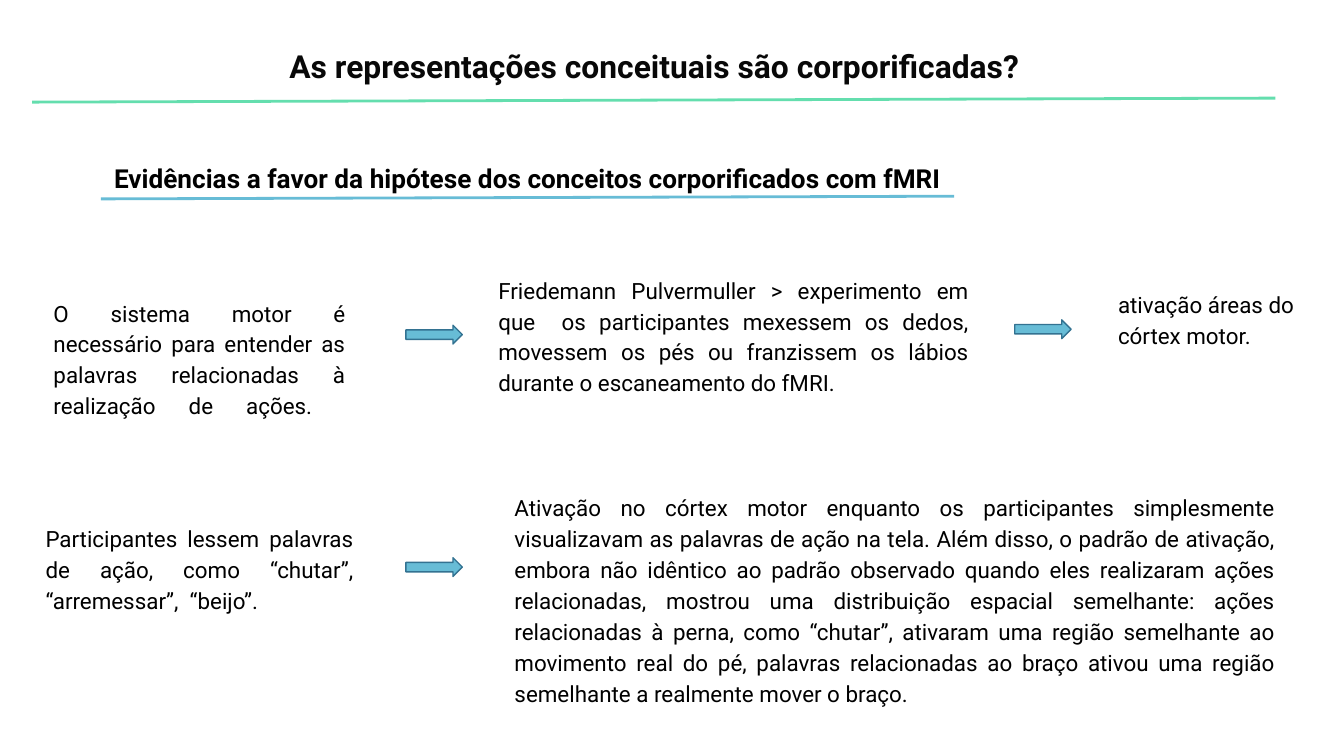
from typing import NamedTuple

from pptx import Presentation
from pptx.dml.color import RGBColor
from pptx.enum.shapes import MSO_CONNECTOR as Connector, MSO_SHAPE as Shape
from pptx.enum.text import MSO_ANCHOR as Anchor, MSO_AUTO_SIZE as AutoSize, PP_ALIGN as Align
from pptx.oxml.ns import qn
from pptx.util import Inches, Pt
from lxml.etree import SubElement

SLIDE_WIDTH = Inches(10)
SLIDE_HEIGHT = SLIDE_WIDTH * 9 // 16

BLACK = RGBColor(0x00, 0x00, 0x00)
TITLE_BLACK = RGBColor(0x08, 0x08, 0x08)
GREEN = RGBColor(0x64, 0xDE, 0xAE)
BLUE = RGBColor(0x67, 0xBC, 0xD6)
DARK_BLUE = RGBColor(0x33, 0x72, 0x91)


class Passage(NamedTuple):
    left: float
    top: float
    width: float
    height: float
    text: str
    size: float = 12
    bold: bool = False
    align: Align = Align.JUSTIFY
    anchor: Anchor = Anchor.TOP


class Underline(NamedTuple):
    start: tuple[float, float]
    end: tuple[float, float]
    color: RGBColor


HEADING = Passage(0, 0.25, 9.8, 0.76, "As representações conceituais são corporificadas? ",
                  17, True, Align.CENTER)

PASSAGES = [
    Passage(0.3, 2.1, 2.37, 1.35,
            "O sistema motor é necessário para entender as palavras relacionadas "
            "à realização de ações. \v"),
    Passage(3.61, 1.93, 3.7, 1.1,
            "Friedemann Pulvermuller > experimento em que  os participantes mexessem "
            "os dedos, movessem os pés ou franzissem os lábios durante o escaneamento "
            "do fMRI. "),
    Passage(0.75, 1.01, 8.65, 0.6,
            "Evidências a favor da hipótese dos conceitos corporificados com fMRI",
            14, True, anchor=Anchor.MIDDLE),
    Passage(8.22, 2.04, 1.69, 0.64, "ativação áreas do córtex motor.", align=Align.LEFT),
    Passage(0.24, 3.78, 2.49, 0.87,
            "Participantes lessem palavras de ação, como “chutar”, “arremessar”,  “beijo”."),
    Passage(3.73, 3.55, 5.86, 1.8,
            "Ativação no córtex motor enquanto os participantes simplesmente visualizavam "
            "as palavras de ação na tela. Além disso, o padrão de ativação, embora não "
            "idêntico ao padrão observado quando eles realizaram ações relacionadas, "
            "mostrou uma distribuição espacial semelhante: ações relacionadas à perna, "
            "como “chutar”, ativaram uma região semelhante ao movimento real do pé, "
            "palavras relacionadas ao braço ativou uma região semelhante a realmente "
            "mover o braço."),
]

UNDERLINES = [
    Underline((0.24, 0.76), (9.49, 0.73), GREEN),
    Underline((0.75, 1.48), (7.1, 1.46), BLUE),
]

ARROW_POSITIONS = [(3.02, 2.42), (7.55, 2.38), (3.02, 4.15)]


def apply(target, values: dict) -> None:
    for name, value in values.items():
        setattr(target, name, value)


def fill_passage(holder, passage: Passage, color: RGBColor, spacing: float) -> None:
    frame = holder.text_frame
    margins = {f"margin_{side}": Inches(0.1) for side in ("left", "top", "right", "bottom")}
    apply(frame, {"word_wrap": True, "auto_size": AutoSize.NONE,
                  "vertical_anchor": passage.anchor, **margins})
    paragraph = frame.paragraphs[0]
    paragraph.text = passage.text
    apply(paragraph, {"alignment": passage.align, "line_spacing": spacing})
    for run in paragraph.runs:
        apply(run.font, {"name": "Roboto", "size": Pt(passage.size), "bold": passage.bold})
        run.font.color.rgb = color


def draw_title(slide, passage: Passage) -> None:
    title = slide.shapes.title
    apply(title, {"left": Inches(passage.left), "top": Inches(passage.top),
                  "width": Inches(passage.width), "height": Inches(passage.height)})
    fill_passage(title, passage, TITLE_BLACK, 1.0)


def draw_passage(slide, passage: Passage) -> None:
    box = slide.shapes.add_textbox(*map(Inches, passage[:4]))
    fill_passage(box, passage, BLACK, 1.15)


def draw_underline(slide, underline: Underline) -> None:
    rule = slide.shapes.add_connector(
        Connector.STRAIGHT, *map(Inches, underline.start + underline.end))
    rule.line.color.rgb = underline.color
    rule.line.width = Pt(1.5)
    SubElement(rule._element.spPr, qn("a:effectLst"))


def draw_arrow(slide, left: float, top: float) -> None:
    arrow = slide.shapes.add_shape(
        Shape.RIGHT_ARROW, *map(Inches, (left, top, 0.42, 0.14)))
    arrow.shadow.inherit = False
    arrow.fill.solid()
    arrow.fill.fore_color.rgb = BLUE
    arrow.line.color.rgb = DARK_BLUE
    arrow.line.width = Pt(0.75)


def main() -> None:
    deck = Presentation()
    apply(deck, {"slide_width": SLIDE_WIDTH, "slide_height": SLIDE_HEIGHT})
    slide = deck.slides.add_slide(deck.slide_layouts[5])
    draw_title(slide, HEADING)
    for passage in PASSAGES:
        draw_passage(slide, passage)
    for underline in UNDERLINES:
        draw_underline(slide, underline)
    for left, top in ARROW_POSITIONS:
        draw_arrow(slide, left, top)
    deck.save("out.pptx")


if __name__ == "__main__":
    main()
